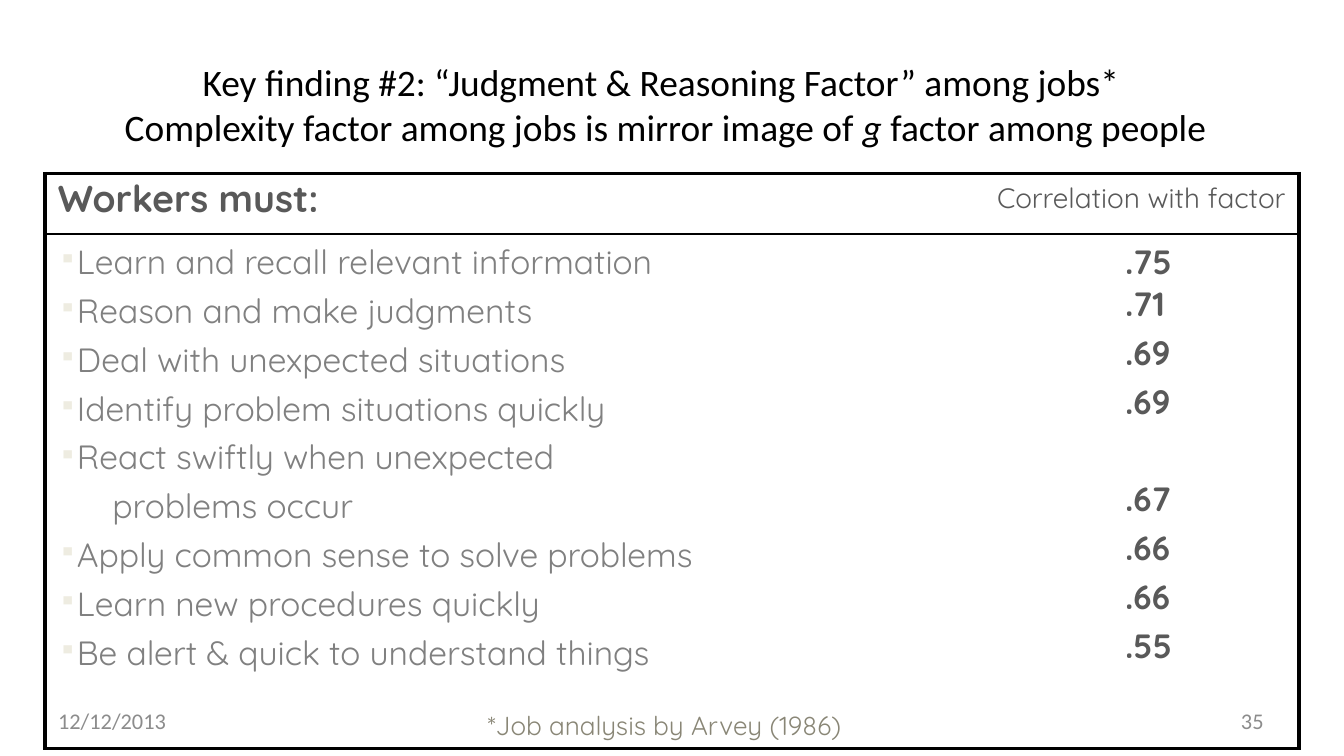
from dataclasses import dataclass

from lxml.etree import SubElement
from pptx import Presentation
from pptx.dml.color import RGBColor
from pptx.enum.text import MSO_ANCHOR as Anchor, MSO_AUTO_SIZE as AutoSize, PP_ALIGN as Align
from pptx.oxml import parse_xml
from pptx.oxml.ns import nsdecls, qn
from pptx.util import Pt


@dataclass(frozen=True)
class Theme:
    """Colours, fonts and type sizes of the slide."""
    black: str = "000000"
    white: str = "FFFFFF"
    dark: str = "595959"
    gray: str = "808080"
    footer: str = "8C8C8C"
    note: str = "898676"
    bullet: str = "EEECE1"
    heading_font: str = "Calibri"
    body_font: str = "Quicksand"
    title_size: float = 20
    body_size: float = 18
    header_size: float = 15
    note_size: float = 14
    footer_size: float = 12
    outer_line: float = 2.25
    inner_line: float = 1


THEME = Theme()
LINE_GAP = 3.6
SKIPPED_LINE = 26.1
REQUIREMENTS = [
    ("Learn and recall relevant information", ".75", 0),
    ("Reason and make judgments", ".71", 0),
    ("Deal with unexpected situations", ".69", LINE_GAP),
    ("Identify problem situations quickly", ".69", LINE_GAP),
    ("React swiftly when unexpected\nproblems occur", ".67", LINE_GAP + SKIPPED_LINE),
    ("Apply common sense to solve problems", ".66", LINE_GAP),
    ("Learn new procedures quickly", ".66", LINE_GAP),
    ("Be alert & quick to understand things", ".55", LINE_GAP),
]


def add_run(paragraph, text, size=THEME.body_size, color=THEME.gray,
            font=THEME.body_font, bold=False, italic=False):
    """Add one formatted run to a paragraph."""
    run = paragraph.add_run()
    run.text = text
    run.font.size, run.font.name = Pt(size), font
    run.font.bold, run.font.italic = bold, italic
    run.font.color.rgb = RGBColor.from_string(color)


def write(frame, text, align=Align.LEFT, before=0, indent=0, bullet=False, **style):
    """Write a paragraph into the frame, using its first one when empty."""
    paragraph = frame.paragraphs[-1]
    if paragraph.runs:
        paragraph = frame.add_paragraph()
    paragraph.alignment = align
    paragraph.space_before = Pt(before)
    properties = paragraph._p.get_or_add_pPr()
    properties.set("marL", str(Pt(indent)))
    properties.set("indent", str(Pt(-indent if bullet else 0)))
    if bullet:
        color = SubElement(properties, qn("a:buClr"))
        SubElement(color, qn("a:srgbClr"), val=THEME.bullet)
        SubElement(properties, qn("a:buSzPct"), val="75000")
        SubElement(properties, qn("a:buChar"), char="▪")
    add_run(paragraph, text, **style)
    return paragraph


def add_text(slide, box, text, wrap=True, **style):
    """Place a vertically centred text box."""
    frame = slide.shapes.add_textbox(*map(Pt, box)).text_frame
    frame.word_wrap = wrap
    frame.vertical_anchor = Anchor.MIDDLE
    write(frame, text, **style)


def add_title(slide, box):
    """Fill the title placeholder with its two lines."""
    title = slide.shapes.title
    title.left, title.top, title.width, title.height = map(Pt, box)
    frame = title.text_frame
    frame.auto_size = AutoSize.NONE
    frame.vertical_anchor = Anchor.MIDDLE
    style = dict(size=THEME.title_size, font=THEME.heading_font, color=THEME.black)
    paragraph = write(frame, "Key finding #2: “Judgment & Reasoning Factor” among jobs* ",
                      align=Align.CENTER, **style)
    paragraph.add_line_break()
    add_run(paragraph, "Complexity factor among jobs is mirror image of ", **style)
    add_run(paragraph, "g ", italic=True, **style)
    add_run(paragraph, "factor among people", **style)


def set_borders(cell, row, column):
    """Draw a heavy frame round the table and a thin rule below its header."""
    outer, inner = THEME.outer_line, THEME.inner_line
    widths = {
        "lnL": outer if column == 0 else 0,
        "lnR": outer if column == 1 or row == 0 else 0,
        "lnT": outer if row == 0 else inner,
        "lnB": inner if row == 0 else outer,
    }
    properties = cell._tc.get_or_add_tcPr()
    for position, (side, width) in enumerate(widths.items()):
        paint = (f'<a:solidFill><a:srgbClr val="{THEME.black}"/></a:solidFill>'
                 if width else "<a:noFill/>")
        properties.insert(position, parse_xml(
            f'<a:{side} {nsdecls("a")} w="{Pt(width)}">{paint}</a:{side}>'))


def add_factor_table(slide, box):
    """Place the table of job requirements and their correlations."""
    table = slide.shapes.add_table(2, 2, *map(Pt, box)).table
    table.first_row = table.horz_banding = False
    value_width, header_height = 100.5, 32.5
    table.columns[0].width, table.columns[1].width = Pt(box[2] - value_width), Pt(value_width)
    table.rows[0].height, table.rows[1].height = Pt(header_height), Pt(box[3] - header_height)
    for row in range(2):
        for column in range(2):
            cell = table.cell(row, column)
            cell.fill.solid()
            cell.fill.fore_color.rgb = RGBColor.from_string(THEME.white)
            set_borders(cell, row, column)
    header = table.cell(0, 0)
    header.merge(table.cell(0, 1))
    write(header.text_frame, "Correlation with factor", align=Align.RIGHT,
          size=THEME.header_size, color=THEME.dark)
    tasks, values = (table.cell(1, column).text_frame for column in range(2))
    for index, (task, value, value_gap) in enumerate(REQUIREMENTS):
        first, *continued = task.split("\n")
        write(tasks, first, before=LINE_GAP if index else 0, indent=9, bullet=True)
        for line in continued:
            write(tasks, line, before=LINE_GAP, indent=29)
        write(values, value, before=value_gap, color=THEME.dark, bold=True)
    write(tasks, "*Job analysis by Arvey (1986)", before=18.8, indent=230,
          size=THEME.note_size, color=THEME.note)


def add_footer(slide, box):
    """Place the date at the left and the slide number at the right."""
    left, top, width, height = box
    part = 168
    style = dict(size=THEME.footer_size, font=THEME.heading_font, color=THEME.footer)
    add_text(slide, (left, top, part, height), "12/12/2013", **style)
    add_text(slide, (left + width - part, top, part, height), "35", align=Align.RIGHT, **style)


def main():
    """Build and save the slide."""
    presentation = Presentation()
    presentation.slide_width, presentation.slide_height = Pt(720), Pt(405)
    slide = presentation.slides.add_slide(presentation.slide_layouts[5])
    add_factor_table(slide, (24, 93, 672, 304))
    add_title(slide, (16.5, 6.5, 680, 98.5))
    add_text(slide, (24, 90, 396, 32), "Workers must:", wrap=False,
             size=THEME.title_size, color=THEME.dark, bold=True)
    add_footer(slide, (24, 375, 660, 21.5))
    presentation.save("out.pptx")


if __name__ == "__main__":
    main()
